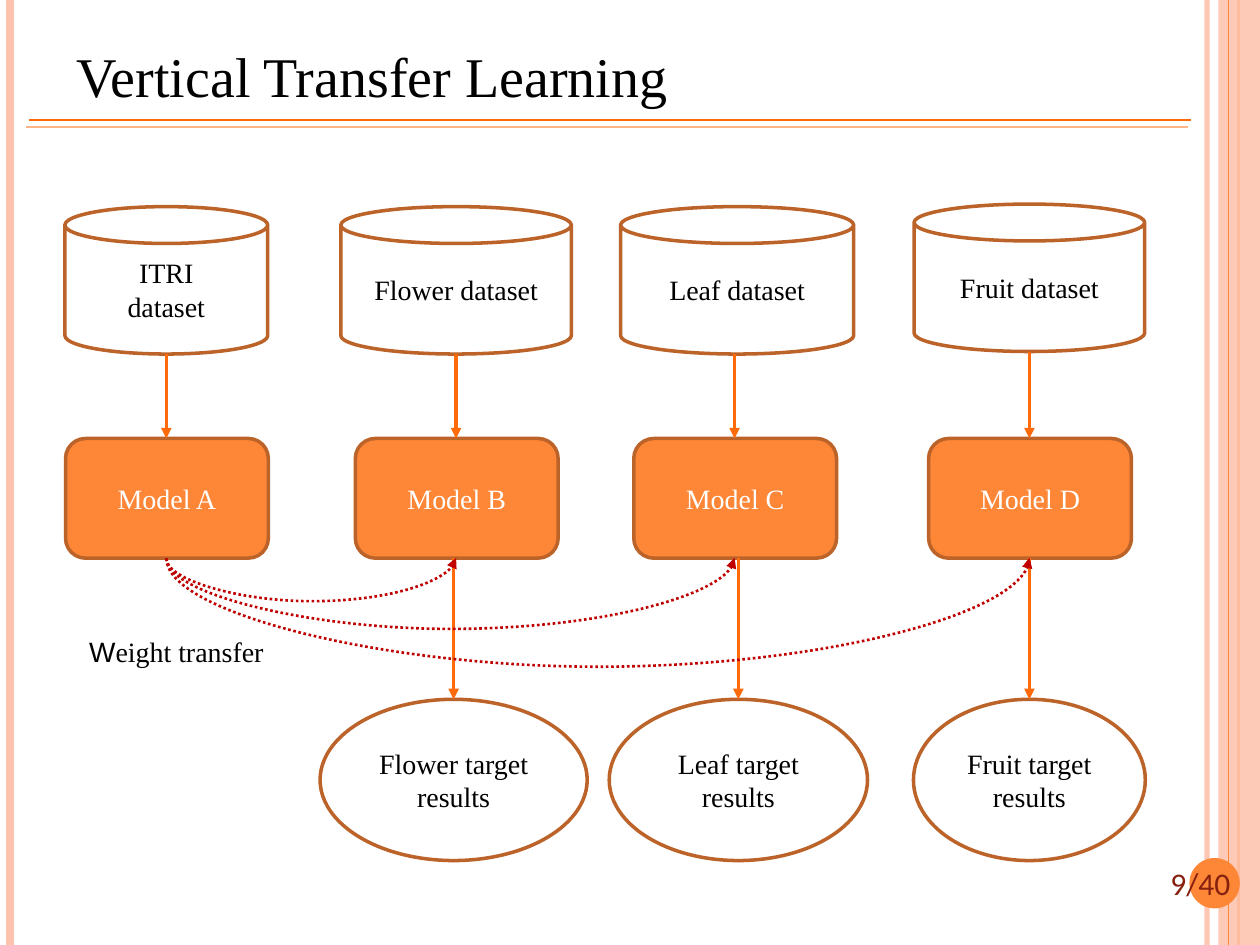
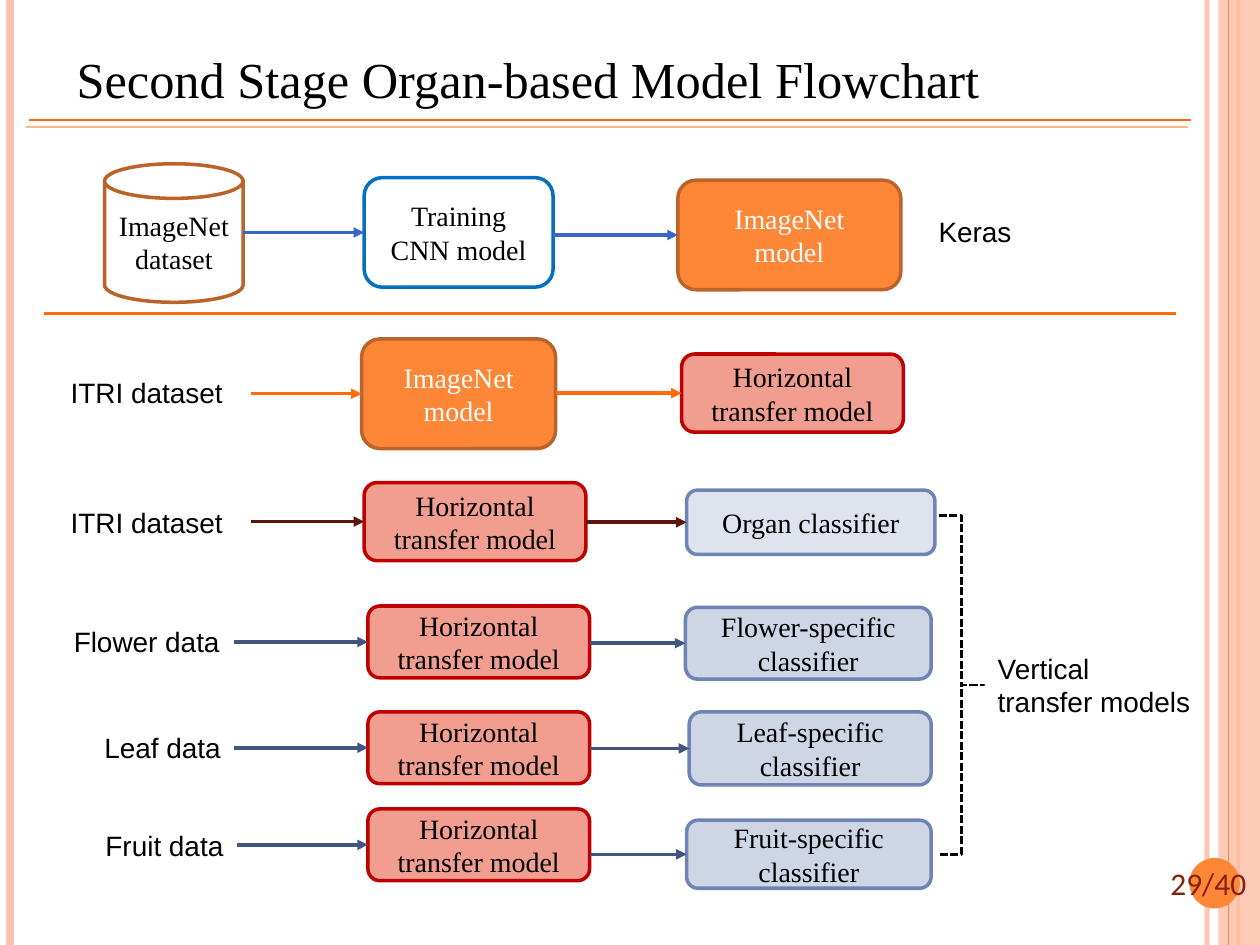
"""Build two slides on vertical transfer learning between plant organ models."""
from dataclasses import dataclass
from typing import Optional

from lxml import etree
from pptx import Presentation
from pptx.dml.color import RGBColor
from pptx.enum.dml import MSO_LINE
from pptx.enum.shapes import MSO_CONNECTOR, MSO_SHAPE
from pptx.enum.text import MSO_ANCHOR, PP_ALIGN
from pptx.oxml.ns import qn
from pptx.util import Inches, Pt

CAN, ROUNDED, OVAL = MSO_SHAPE.CAN, MSO_SHAPE.ROUNDED_RECTANGLE, MSO_SHAPE.OVAL
RECTANGLE, BRACE = MSO_SHAPE.RECTANGLE, MSO_SHAPE.RIGHT_BRACE
STRAIGHT, CURVE = MSO_CONNECTOR.STRAIGHT, MSO_CONNECTOR.CURVE
DOTTED, DASHED = MSO_LINE.ROUND_DOT, MSO_LINE.SQUARE_DOT
LEFT, CENTER = PP_ALIGN.LEFT, PP_ALIGN.CENTER
TOP, MIDDLE, BOTTOM = MSO_ANCHOR.TOP, MSO_ANCHOR.MIDDLE, MSO_ANCHOR.BOTTOM
SERIF, SANS, NUMBER_FONT = "Times New Roman", "Arial", "Calibri"

BLACK, WHITE = "000000", "FFFFFF"
ORANGE, BRIGHT_ORANGE, BROWN = "FE8637", "FF6B0A", "BC6329"
PEACH, PALE_ORANGE, RUST = "FEC3AE", "FEB687", "862110"
RED, DARK_RED, BLUE, NAVY = "C00000", "5A160B", "3668C4", "42557F"
PAGE_COUNT = 40
CURVE_THICKNESS = 4320


@dataclass(frozen=True)
class Style:
    """Look of one kind of flowchart node."""
    shape: int
    fill: Optional[str]
    line: str
    color: str = BLACK


DATASET = Style(CAN, None, BROWN)
RESULT = Style(OVAL, None, BROWN)
MODEL = Style(ROUNDED, ORANGE, BROWN, WHITE)
TRAINING = Style(ROUNDED, None, "0070C0")
HORIZONTAL = Style(ROUNDED, "F19E91", RED)
ORGAN = Style(ROUNDED, "DFE3EE", "6E84B4")
SPECIFIC = Style(ROUNDED, "CED6E6", "6E84B4")


@dataclass(frozen=True)
class Node:
    """A styled, captioned box in inches."""
    text: str
    style: Style
    left: float
    top: float
    width: float
    height: float

    @property
    def right(self) -> float:
        """Return the right edge."""
        return self.left + self.width

    @property
    def middle(self) -> float:
        """Return the vertical centre."""
        return self.top + self.height / 2


@dataclass(frozen=True)
class Column:
    """One dataset, its model and its result on the vertical slide."""
    letter: str
    dataset: str
    center: float
    can_center: float
    can_width: float
    can_top: float = 1.64
    result: str = ""
    result_center: float = 0
    result_width: float = 0


@dataclass(frozen=True)
class Row:
    """One chain of two nodes, entered by an arrow from the left."""
    start: float
    color: str
    source: Node
    target: Node


@dataclass(frozen=True)
class Label:
    """A free text at a place in inches."""
    text: str
    left: float
    top: float
    width: float
    height: float = 0.37
    align: int = CENTER


def horizontal_node(left: float, top: float, height: float) -> Node:
    """Return a horizontal transfer model node."""
    return Node("Horizontal transfer model", HORIZONTAL, left, top, 1.76, height)


COLUMNS = [
    Column("A", "ITRI\ndataset", 1.32, 1.32, 1.61),
    Column("B", "Flower dataset", 3.62, 3.62, 1.83, 1.64, "Flower target results", 3.6, 2.12),
    Column("C", "Leaf dataset", 5.83, 5.85, 1.85, 1.64, "Leaf target results", 5.86, 2.05),
    Column("D", "Fruit dataset", 8.17, 8.17, 1.83, 1.62, "Fruit target results", 8.17, 1.84),
]
CURVE_DEPTHS = [0.34, 0.56, 0.86]

IMAGE_DATASET = Node("ImageNet\ndataset", DATASET, 0.83, 1.3, 1.1, 1.1)
ROWS = [
    Row(IMAGE_DATASET.right, BLUE,
        Node("Training CNN model", TRAINING, 2.89, 1.41, 1.5, 0.87),
        Node("ImageNet\nmodel", MODEL, 5.38, 1.43, 1.77, 0.87)),
    Row(1.99, BRIGHT_ORANGE,
        Node("ImageNet\nmodel", MODEL, 2.87, 2.69, 1.54, 0.87),
        horizontal_node(5.41, 2.81, 0.62)),
    Row(1.99, DARK_RED, horizontal_node(2.89, 3.83, 0.62),
        Node("Organ classifier", ORGAN, 5.45, 3.89, 1.97, 0.51)),
    Row(1.86, NAVY, horizontal_node(2.92, 4.81, 0.57),
        Node("Flower-specific classifier", SPECIFIC, 5.44, 4.82, 1.95, 0.57)),
    Row(1.86, NAVY, horizontal_node(2.92, 5.65, 0.57),
        Node("Leaf-specific classifier", SPECIFIC, 5.47, 5.65, 1.92, 0.58)),
    Row(1.88, NAVY, horizontal_node(2.92, 6.42, 0.57),
        Node("Fruit-specific classifier", SPECIFIC, 5.45, 6.51, 1.94, 0.54)),
]
LABELS = [
    Label("Keras", 7.35, 1.65, 0.79, align=LEFT),
    Label("ITRI dataset", 0.35, 2.93, 1.63),
    Label("ITRI dataset", 0.35, 3.96, 1.63),
    Label("Flower data", 0.48, 4.91, 1.37),
    Label("Leaf data", 0.72, 5.75, 1.14),
    Label("Fruit data", 0.73, 6.53, 1.15),
    Label("Vertical\ntransfer models", 7.82, 5.12, 2.11, 0.91, LEFT),
]


def rgb(value: str) -> RGBColor:
    """Return the colour of a hex string."""
    return RGBColor.from_string(value)


def write_text(shape, text: str, *, size: float = 16, font: str = SERIF, color: str = BLACK,
               align: int = CENTER, anchor: int = MIDDLE, wrap: bool = True,
               initial_font: Optional[str] = None) -> None:
    """Fill a shape with formatted text, one paragraph per line."""
    frame = shape.text_frame
    frame.word_wrap, frame.vertical_anchor = wrap, anchor
    for index, line in enumerate(text.split("\n")):
        para = frame.add_paragraph() if index else frame.paragraphs[0]
        para.alignment = align
        parts = [(line[0], initial_font), (line[1:], font)] if initial_font else [(line, font)]
        for part, face in parts:
            span = para.add_run()
            span.text = part
            span.font.name, span.font.size = face, Pt(size)
            span.font.color.rgb = rgb(color)


def add_label(page, label: Label, **text_format) -> None:
    """Place a text box without an outline."""
    box = page.shapes.add_textbox(Inches(label.left), Inches(label.top),
                                  Inches(label.width), Inches(label.height))
    write_text(box, label.text, align=label.align, **text_format)


def set_alpha(color_parent, percent: int) -> None:
    """Make the solid colour inside an element partly opaque."""
    color = next(color_parent.iter(qn("a:srgbClr")))
    etree.SubElement(color, qn("a:alpha")).set("val", str(percent * 1000))


def add_box(page, kind: int, left: float, top: float, width: float, height: float,
            fill: Optional[str] = None, line: Optional[str] = None, weight: float = 2):
    """Draw a preset shape with optional fill and outline."""
    box = page.shapes.add_shape(kind, Inches(left), Inches(top), Inches(width), Inches(height))
    box.shadow.inherit = False
    if fill:
        box.fill.solid()
        box.fill.fore_color.rgb = rgb(fill)
    else:
        box.fill.background()
    if line:
        box.line.color.rgb, box.line.width = rgb(line), Pt(weight)
    else:
        box.line.fill.background()
    return box


def add_node(page, node: Node) -> None:
    """Draw a flowchart node with its caption."""
    style = node.style
    box = add_box(page, style.shape, node.left, node.top, node.width, node.height,
                  style.fill, style.line)
    write_text(box, node.text, color=style.color)


def add_line(page, start: tuple[float, float], end: tuple[float, float], color: str,
             weight: float = 2, arrow: bool = False, kind: int = STRAIGHT):
    """Draw a connector, with an arrowhead at its end on request."""
    line = page.shapes.add_connector(kind, *map(Inches, start + end))
    line.line.color.rgb, line.line.width = rgb(color), Pt(weight)
    if arrow:
        etree.SubElement(line.line._get_or_add_ln(), qn("a:tailEnd")).set("type", "triangle")
    etree.SubElement(line._element.spPr, qn("a:effectLst"))
    return line


def add_curve(page, start: float, end: float, top: float, depth: float) -> None:
    """Draw a dotted arrow hanging between two points of equal height."""
    curve = add_line(page, (start, top), (end, top), RED, 1.5, True, CURVE)
    curve.line.dash_style = DOTTED
    span = Inches(end - start)
    curve.left = Inches((start + end) / 2) - CURVE_THICKNESS // 2
    curve.top = Inches(top) - span // 2
    curve.width, curve.height = CURVE_THICKNESS, span
    properties = curve._element.spPr
    frame = properties.find(qn("a:xfrm"))
    for name, value in (("rot", "5400000"), ("flipH", "1"), ("flipV", "1")):
        frame.set(name, value)
    adjustments = properties.find(qn("a:prstGeom")).get_or_add_avLst()
    guide = etree.SubElement(adjustments, qn("a:gd"))
    guide.set("name", "adj1")
    guide.set("fmla", f"val {-round(Inches(depth) / CURVE_THICKNESS * 100000)}")


def add_page(deck, title: str, size: float, number: int):
    """Add a page with side bands, title rules, title and page number."""
    page = deck.slides.add_slide(deck.slide_layouts[6])
    inner = add_line(page, (9.58, 0), (9.58, 7.5), PEACH, 3)
    set_alpha(inner._element.spPr, 93)
    add_line(page, (0.08, 0), (0.08, 7.5), PEACH, 4.5)
    add_line(page, (9.83, 0), (9.83, 7.5), ORANGE, 1.5)
    band = add_box(page, RECTANGLE, 9.67, 0, 0.33, 7.5, PEACH)
    set_alpha(band._element.spPr, 87)
    add_line(page, (9.75, 0), (9.75, 7.5), ORANGE, 0.75)
    add_line(page, (0.23, 0.95), (9.45, 0.95), BRIGHT_ORANGE, 1)
    add_line(page, (0.21, 1.01), (9.43, 1.01), PALE_ORANGE, 1)
    add_box(page, OVAL, 9.44, 6.81, 0.4, 0.4, ORANGE)
    add_label(page, Label(f"{number}/{PAGE_COUNT}", 9.19, 6.81, 0.85, 0.4, LEFT),
              size=18, font=NUMBER_FONT, color=RUST, anchor=TOP, wrap=False)
    add_label(page, Label(title, 0.51, 0.13, 8.17, 0.78, LEFT), size=size, anchor=BOTTOM)
    return page


def build_vertical_transfer(deck) -> None:
    """Draw datasets, models and results in four columns."""
    page = add_page(deck, "Vertical Transfer Learning", 32, 9)
    for column in COLUMNS:
        center = column.center
        add_node(page, Node(column.dataset, DATASET, column.can_center - column.can_width / 2,
                            column.can_top, column.can_width, 1.17))
        add_node(page, Node(f"Model {column.letter}", MODEL, center - 0.8, 3.48, 1.61, 0.95))
        add_line(page, (center, column.can_top + 1.17), (center, 3.48), BRIGHT_ORANGE, arrow=True)
        if column.result:
            middle, width = column.result_center, column.result_width
            add_node(page, Node(column.result, RESULT, middle - width / 2, 5.55, width, 1.28))
            add_line(page, (middle, 4.43), (middle, 5.55), BRIGHT_ORANGE, arrow=True)
    for column, depth in zip(COLUMNS[1:], CURVE_DEPTHS):
        add_curve(page, COLUMNS[0].center, column.center, 4.43, depth)
    add_label(page, Label("Weight transfer", 0.61, 4.99, 1.67, 0.38, LEFT),
              anchor=TOP, wrap=False, initial_font=SANS)


def build_flowchart(deck) -> None:
    """Draw the chains from image data to organ classifiers."""
    page = add_page(deck, "Second Stage Organ-based Model Flowchart", 28.8, 29)
    add_node(page, IMAGE_DATASET)
    for row in ROWS:
        source, target = row.source, row.target
        add_node(page, source)
        add_node(page, target)
        for left, node in ((row.start, source), (source.right, target)):
            add_line(page, (left, node.middle), (node.left, node.middle), row.color, arrow=True)
    brace = add_box(page, BRACE, 7.45, 4.09, 0.36, 2.69, line=BLACK, weight=1.5)
    brace.adjustments[0] = 0
    brace.line.dash_style = DASHED
    add_line(page, (0.35, 2.49), (9.33, 2.49), BRIGHT_ORANGE)
    for label in LABELS:
        add_label(page, label, font=SANS, anchor=TOP, wrap=False)


def main() -> None:
    """Build and save the deck."""
    deck = Presentation()
    deck.slide_width, deck.slide_height = Inches(10), Inches(7.5)
    build_vertical_transfer(deck)
    build_flowchart(deck)
    deck.save("out.pptx")


if __name__ == "__main__":
    main()
